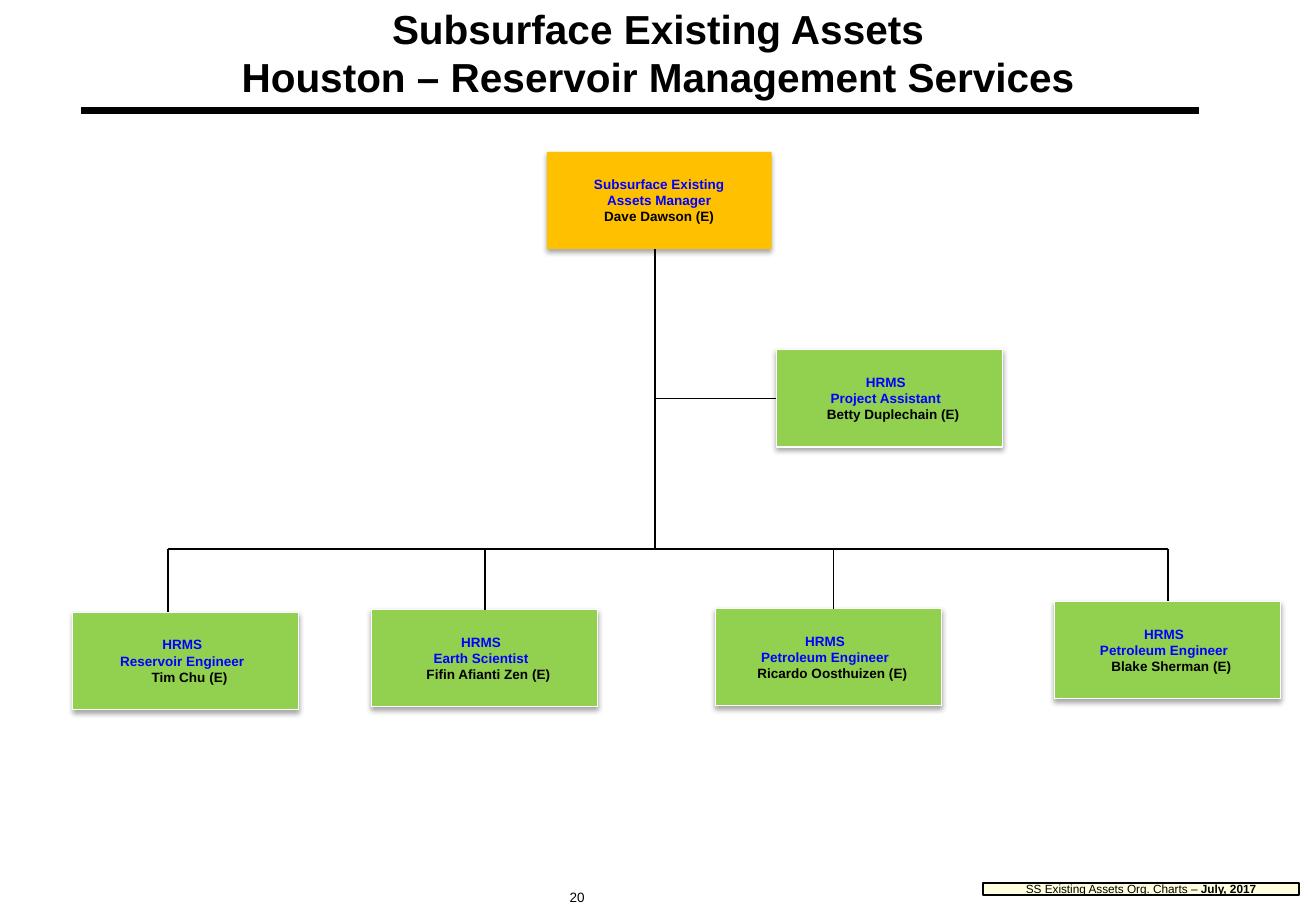
from lxml import etree
from pptx import Presentation
from pptx import util as u
from pptx.dml.color import RGBColor
from pptx.enum import shapes, text
from pptx.oxml import ns

BLACK, BLUE, WHITE = "000000", "0000FF", "FFFFFF"
AMBER, GREEN, CREAM = "FFC000", "92D050", "FFFFCC"
CENTER, MIDDLE = text.PP_ALIGN.CENTER, text.MSO_ANCHOR.MIDDLE
BOX_HEIGHT, STAFF_WIDTH = 0.8, 1.86
TRUNK_X, RAIL_Y = 5.39, 4.52

# left, top, x of the drop line, role, name
STAFF = [
    (0.6, 5.04, 1.38, "Reservoir Engineer", "Tim Chu (E)"),
    (3.06, 5.02, 3.99, "Earth Scientist", "Fifin Afianti Zen (E)"),
    (5.89, 5.01, 6.86, "Petroleum Engineer", "Ricardo Oosthuizen (E)"),
    (8.68, 4.95, 9.61, "Petroleum Engineer", "Blake Sherman (E)"),
]


def color(hex_value):
    return RGBColor.from_string(hex_value)


def inches(*lengths):
    return [u.Inches(length) for length in lengths]


def set_frame(frame, insets, **settings):
    sides = ("margin_left", "margin_top", "margin_right", "margin_bottom")
    for key, value in {**dict(zip(sides, inches(*insets))), **settings}.items():
        setattr(frame, key, value)


def add_run(paragraph, words, size, hex_value=BLACK, bold=False):
    run = paragraph.add_run()
    run.text = words
    for key, value in dict(name="Arial", size=u.Pt(size), bold=bold).items():
        setattr(run.font, key, value)
    run.font.color.rgb = color(hex_value)


def add_line(slide, x1, y1, x2, y2, weight=1):
    line = slide.shapes.add_connector(
        shapes.MSO_CONNECTOR.STRAIGHT, *inches(x1, y1, x2, y2))
    line.line.color.rgb = color(BLACK)
    line.line.width = u.Pt(weight)
    etree.SubElement(line._element.spPr, ns.qn("a:effectLst"))
    return line


def add_rectangle(slide, box, fill, outline=None, weight=0.75):
    rectangle = slide.shapes.add_shape(
        shapes.MSO_SHAPE.RECTANGLE, *inches(*box))
    rectangle.shadow.inherit = False
    rectangle.fill.solid()
    rectangle.fill.fore_color.rgb = color(fill)
    if outline:
        rectangle.line.color.rgb = color(outline)
        rectangle.line.width = u.Pt(weight)
    else:
        rectangle.line.fill.background()
    return rectangle


def add_shadow(rectangle):
    effects = rectangle._element.spPr.find(ns.qn("a:effectLst"))
    shadow = etree.SubElement(
        effects, ns.qn("a:outerShdw"), blurRad=str(u.Pt(3.1)),
        dist=str(u.Pt(1.8)), dir="5400000", rotWithShape="0")
    tint = etree.SubElement(shadow, ns.qn("a:srgbClr"), val=BLACK)
    etree.SubElement(tint, ns.qn("a:alpha"), val="35000")


def add_position(slide, box, fill, role_lines, name, outline=None, shift=0):
    """A box of the chart; roles sit left of centre and the name right by shift."""
    position = add_rectangle(slide, box, fill, outline)
    add_shadow(position)
    frame = position.text_frame
    set_frame(frame, (0.05, 0.05, 0.05 + shift, 0.05),
              vertical_anchor=MIDDLE, word_wrap=True)
    for index, words in enumerate([*role_lines, name]):
        paragraph = frame.add_paragraph() if index else frame.paragraphs[0]
        paragraph.alignment = CENTER
        is_name = index == len(role_lines)
        if is_name and shift:
            paragraph._p.get_or_add_pPr().set("marL", str(u.Inches(2 * shift)))
        add_run(paragraph, words, 8, BLACK if is_name else BLUE, True)
    return position


def add_staff(slide, left, top, role, name):
    return add_position(slide, (left, top, STAFF_WIDTH, BOX_HEIGHT), GREEN,
                        ["HRMS", role], name, WHITE, 0.06)


def build_heading(slide, left, top, width, height):
    title = slide.shapes.title
    for key, value in zip(("left", "top", "width", "height"),
                          inches(left, top, width, height)):
        setattr(title, key, value)
    frame = title.text_frame
    set_frame(frame, (0.1, 0.05, 0.1, 0), word_wrap=True,
              vertical_anchor=text.MSO_ANCHOR.BOTTOM,
              auto_size=text.MSO_AUTO_SIZE.NONE)
    heading = frame.paragraphs[0]
    heading.alignment = CENTER
    add_run(heading, "Subsurface Existing Assets", 24, bold=True)
    heading.add_line_break()
    add_run(heading, "Houston – Reservoir Management Services", 24, bold=True)
    rule_y = top + height + 0.08
    add_line(slide, left + 0.67, rule_y, left + 9.87, rule_y, 3.75)


def build_chart(slide, left, top):
    # Manager and trunk
    add_position(slide, (left, top, 1.85, BOX_HEIGHT), AMBER,
                 ["Subsurface Existing", "Assets Manager"], "Dave Dawson (E)")
    add_line(slide, TRUNK_X, top + BOX_HEIGHT, TRUNK_X, RAIL_Y)

    # Assistant, joined to the trunk
    assistant_top = 2.88
    assistant = add_staff(slide, 6.39, assistant_top,
                          "Project Assistant", "Betty Duplechain (E)")
    branch_y = assistant_top + BOX_HEIGHT / 2
    add_line(slide, 6.39, branch_y, TRUNK_X, branch_y).begin_connect(assistant, 1)

    # Rail with the staff below it
    add_line(slide, STAFF[0][2], RAIL_Y, STAFF[-1][2], RAIL_Y)
    for staff_left, staff_top, drop_x, role, name in STAFF:
        member = add_staff(slide, staff_left, staff_top, role, name)
        drop = add_line(slide, drop_x, RAIL_Y, drop_x, staff_top)
        if abs(staff_left + STAFF_WIDTH / 2 - drop_x) < 0.01:
            drop.end_connect(member, 0)


def build_footer(slide, top):
    # Slide number
    number = slide.shapes.add_textbox(*inches(4.59, top, 1.67, 0.23)).text_frame
    set_frame(number, (0.1, 0.05, 0.1, 0.05), word_wrap=True)
    add_run(number.paragraphs[0], "20", 8)

    # Document label
    label = add_rectangle(slide, (8.09, top, 2.6, 0.1), CREAM, BLACK, 1)
    tint = label._element.spPr.find(ns.qn("a:solidFill"))[0]
    etree.SubElement(tint, ns.qn("a:alpha"), val="60000")
    set_frame(label.text_frame, [0.05] * 4,
              vertical_anchor=MIDDLE, word_wrap=False)
    caption = label.text_frame.paragraphs[0]
    caption.alignment = CENTER
    add_run(caption, "SS Existing Assets Org. Charts – ", 7)
    add_run(caption, "July, 2017", 7, bold=True)


def main():
    deck = Presentation()
    deck.slide_width, deck.slide_height = inches(10.83, 7.5)
    slide = deck.slides.add_slide(deck.slide_layouts[5])
    build_heading(slide, 0, 0, 10.83, 0.83)
    build_chart(slide, 4.5, 1.25)
    build_footer(slide, 7.27)
    deck.save("out.pptx")


if __name__ == "__main__":
    main()
